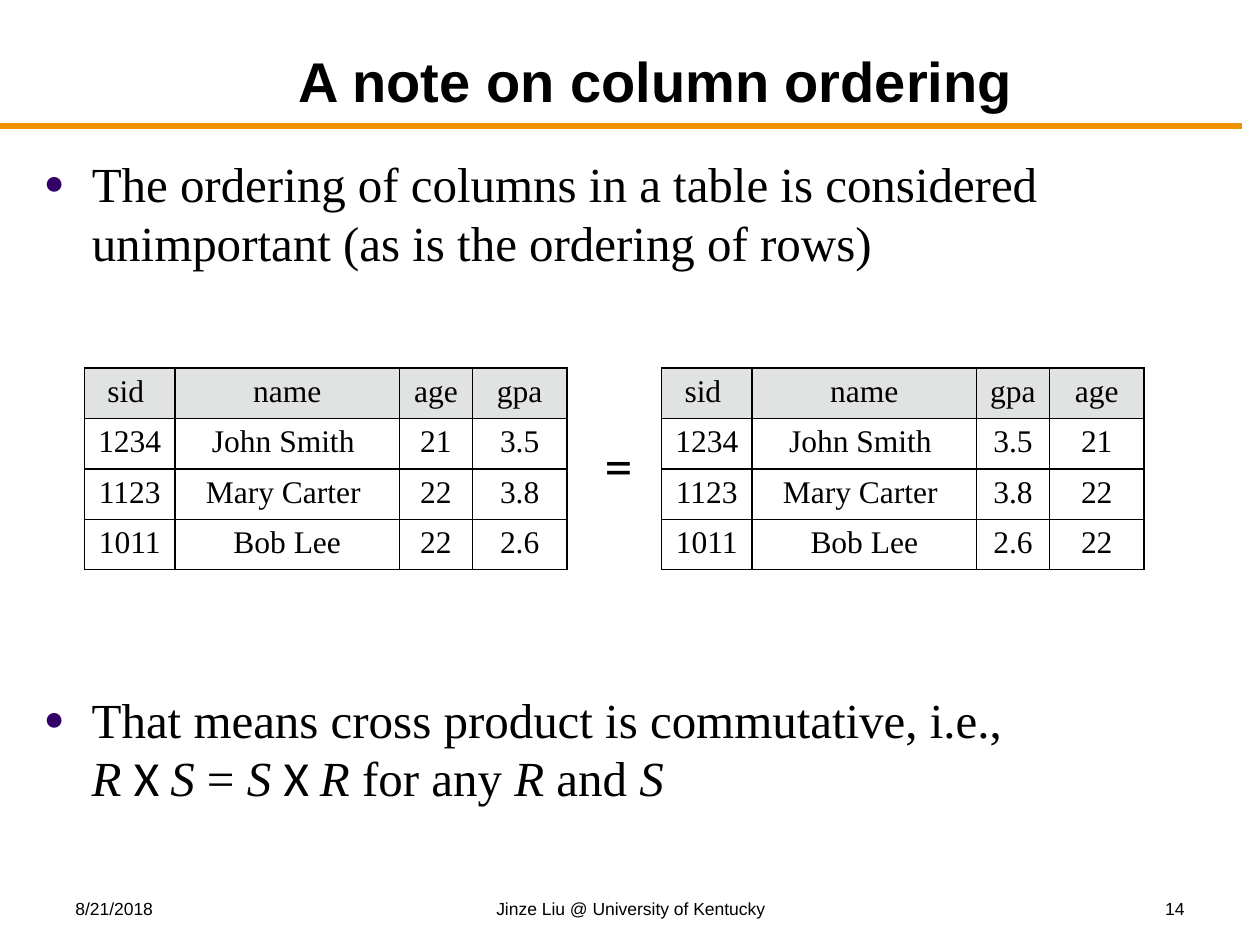
from lxml import etree
from pptx import Presentation
from pptx.dml.color import RGBColor
from pptx.enum.shapes import MSO_CONNECTOR
from pptx.enum.text import MSO_ANCHOR, MSO_AUTO_SIZE, PP_ALIGN
from pptx.oxml import parse_xml
from pptx.oxml.ns import nsdecls, qn
from pptx.util import Inches, Pt

BLACK = RGBColor(0x00, 0x00, 0x00)
ORANGE = RGBColor(0xEF, 0x91, 0x00)
HEADER_GRAY = RGBColor(0xE1, 0xE3, 0xE3)
BULLET_PURPLE = RGBColor(0x33, 0x00, 0x66)
SERIF = "Times New Roman"


def add_text(box, runs, size, align=PP_ALIGN.LEFT, **font_values):
    """Add a text box with (text, font values) runs and return its shape."""
    shape = slide.shapes.add_textbox(*(Inches(length) for length in box))
    shape.text_frame.word_wrap = True
    paragraph = shape.text_frame.paragraphs[0]
    paragraph.alignment = align
    for text, run_values in runs:
        if text == "\n":
            paragraph.add_line_break()
            continue
        run = paragraph.add_run()
        run.text = text
        run.font.color.rgb = BLACK
        values = {"name": "Arial", "size": Pt(size)} | font_values | run_values
        for name, value in values.items():
            setattr(run.font, name, value)
    return shape


def add_paragraph_xml(shape, *elements):
    properties = shape.text_frame.paragraphs[0]._p.get_or_add_pPr()
    for element in elements:
        properties.append(parse_xml(element.replace(">", f" {nsdecls('a')}>", 1)))
    return properties


presentation = Presentation()
presentation.slide_width = Inches(10)
presentation.slide_height = Inches(7.5)
slide = presentation.slides.add_slide(presentation.slide_layouts[6])

# Title and rule
rule = slide.shapes.add_connector(
    MSO_CONNECTOR.STRAIGHT, Inches(0), Inches(1), Inches(9.86), Inches(1)
)
rule.line.color.rgb = ORANGE
rule.line.width = Pt(3)
etree.SubElement(rule._element.spPr, qn("a:effectLst"))

title = add_text((1.08, 0.25, 8.25, 0.7), [("A note on column ordering", {})], 32,
                 PP_ALIGN.CENTER, bold=True)
title.text_frame.vertical_anchor = MSO_ANCHOR.BOTTOM

# Footer
for left, width, text, align in [
    (0.5, 2.33, "8/21/2018", PP_ALIGN.LEFT),
    (3.42, 3.17, "Jinze Liu @ University of Kentucky", PP_ALIGN.CENTER),
    (7.17, 2.33, "14", PP_ALIGN.RIGHT),
]:
    add_text((left, 7.08, width, 0.25), [(text, {})], 10, align)

# Bulleted statements
SPACE_BEFORE = '<a:spcBef><a:spcPct val="20000"/></a:spcBef>'
ITALIC = {"italic": True}
CROSS = ("X ", {"name": "Calibri"})
ordering_runs = [
    ("The ordering of columns in a table is considered unimportant "
     "(as is the ordering of rows)", {}),
]
commutative_runs = [
    ("That means cross product is commutative, i.e.,", {}), ("\n", {}),
    ("R ", ITALIC), CROSS, ("S", ITALIC), (" = ", {}),
    ("S ", ITALIC), CROSS, ("R", ITALIC), (" for any ", {}),
    ("R", ITALIC), (" and ", {}), ("S", ITALIC),
]
for box, runs in [
    ((0.25, 1.17, 9.42, 1.31), ordering_runs),
    ((0.25, 5.42, 9.5, 1.33), commutative_runs),
]:
    statement = add_text(box, runs, 28, name=SERIF)
    properties = add_paragraph_xml(
        statement,
        SPACE_BEFORE,
        f'<a:buClr><a:srgbClr val="{BULLET_PURPLE}"/></a:buClr>',
        '<a:buSzPct val="70000"></a:buSzPct>',
        '<a:buFont typeface="Arial"></a:buFont>',
        '<a:buChar char="●"></a:buChar>',
    )
    properties.set("marL", str(Inches(0.38)))
    properties.set("indent", str(-Inches(0.38)))

equals = add_text((4.7, 3.37, 0.57, 0.63), [("=", {})], 32, name="Calibri")
equals.text_frame.word_wrap = False
equals.text_frame.auto_size = MSO_AUTO_SIZE.SHAPE_TO_FIT_TEXT
add_paragraph_xml(equals, SPACE_BEFORE)

# The same student table in two column orders
COLUMN_WIDTHS = [0.72, 1.78, 0.58, 0.75]
ROW_HEIGHT = 0.4
students = [
    ("sid ", "name", "age", "gpa"),
    ("1234", "John Smith ", "21", "3.5"),
    ("1123", "Mary Carter ", "22", "3.8"),
    ("1011", "Bob Lee", "22", "2.6"),
]
for left, column_order in [(0.67, (0, 1, 2, 3)), (5.25, (0, 1, 3, 2))]:
    table = slide.shapes.add_table(
        len(students), len(COLUMN_WIDTHS), Inches(left), Inches(2.92),
        Inches(sum(COLUMN_WIDTHS)), Inches(ROW_HEIGHT * len(students)),
    ).table
    for column, width in zip(table.columns, COLUMN_WIDTHS):
        column.width = Inches(width)
    for row_index, student in enumerate(students):
        table.rows[row_index].height = Inches(ROW_HEIGHT)
        for column_index, source_index in enumerate(column_order):
            cell = table.cell(row_index, column_index)
            paragraph = cell.text_frame.paragraphs[0]
            paragraph.alignment = PP_ALIGN.CENTER
            run = paragraph.add_run()
            run.text = student[source_index]
            run.font.color.rgb = BLACK
            for name, value in {"name": SERIF, "size": Pt(18), "bold": False}.items():
                setattr(run.font, name, value)
            cell_properties = cell._tc.get_or_add_tcPr()
            for side in ("lnL", "lnR", "lnT", "lnB"):
                cell_properties.append(parse_xml(
                    f'<a:{side} {nsdecls("a")} w="{Pt(1)}"><a:solidFill>'
                    f'<a:srgbClr val="{BLACK}"/></a:solidFill></a:{side}>'
                ))
            if row_index == 0:
                cell.fill.solid()
                cell.fill.fore_color.rgb = HEADER_GRAY
            else:
                cell.fill.background()

presentation.save("out.pptx")
